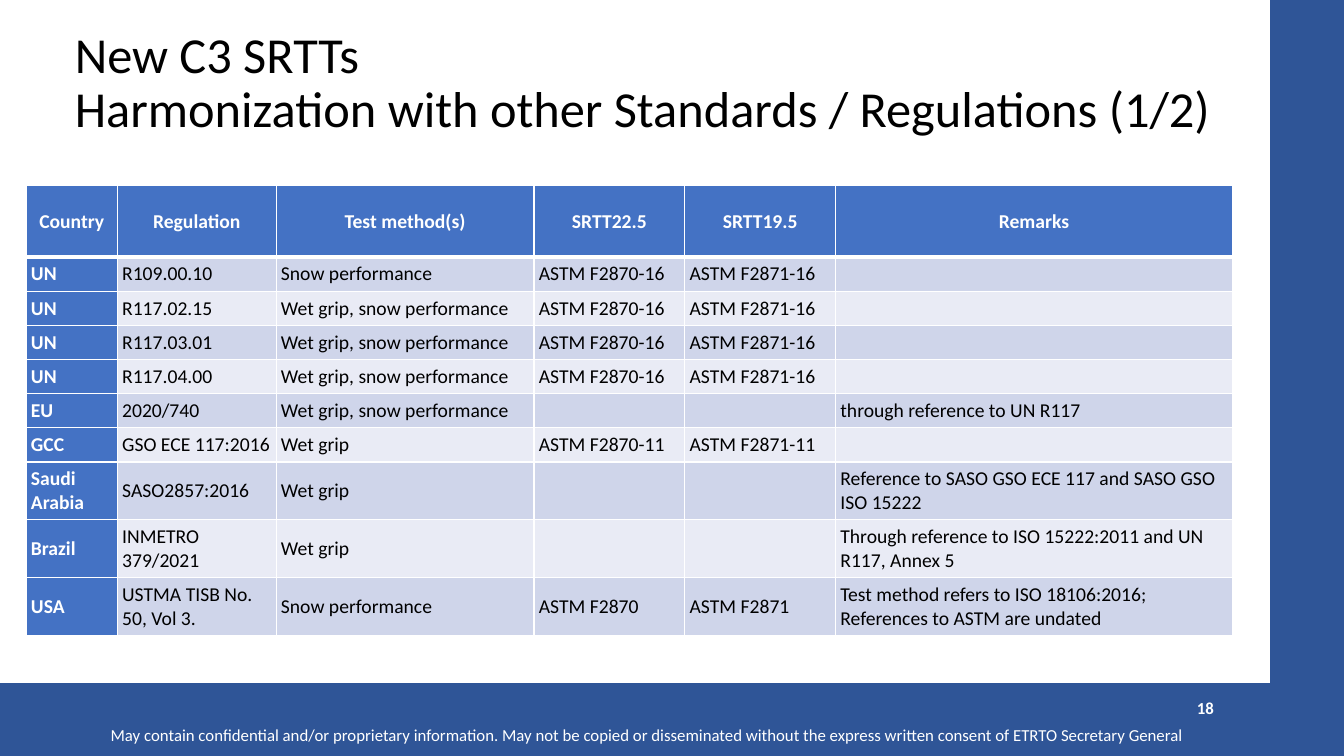
from dataclasses import dataclass

from lxml.etree import SubElement
from pptx import Presentation
from pptx.dml.color import RGBColor
from pptx.enum.shapes import MSO_SHAPE
from pptx.enum.text import MSO_ANCHOR, MSO_AUTO_SIZE, PP_ALIGN
from pptx.oxml import parse_xml
from pptx.oxml.ns import nsdecls, qn
from pptx.util import Cm, Pt


@dataclass(frozen=True)
class Theme:
    font: str = "Calibri"
    title: int = 36
    cell: int = 14
    small: int = 12
    bar: str = "2F5597"
    head: str = "4472C4"
    bands: tuple = ("CFD5EA", "E9EBF5")
    white: str = "FFFFFF"
    black: str = "000000"


class Page:
    def __init__(self, deck, theme):
        self.theme = theme
        self.slide = deck.slides.add_slide(deck.slide_layouts[5])

    def style(self, frame, size, color, bold=False, align=PP_ALIGN.LEFT):
        for para in frame.paragraphs:
            para.alignment = align
            for run in para.runs:
                font = run.font
                font.name, font.size, font.bold = self.theme.font, Pt(size), bold
                font.color.rgb = RGBColor.from_string(color)
            if not para.runs:
                # An empty cell takes its line height from the end mark.
                SubElement(para._p, qn("a:endParaRPr"), sz=str(size * 100))

    def title(self, text, box):
        shape = self.slide.shapes.title
        shape.left, shape.top, shape.width, shape.height = map(Cm, box)
        frame = shape.text_frame
        frame.text = text
        frame.word_wrap = True
        frame.auto_size = MSO_AUTO_SIZE.NONE
        frame.vertical_anchor = MSO_ANCHOR.MIDDLE
        frame.paragraphs[0].line_spacing = 0.9
        self.style(frame, self.theme.title, self.theme.black)

    def bar(self, box):
        shape = self.slide.shapes.add_shape(MSO_SHAPE.RECTANGLE, *map(Cm, box))
        shape.shadow.inherit = False
        color = RGBColor.from_string(self.theme.bar)
        shape.fill.solid()
        shape.fill.fore_color.rgb = color
        shape.line.color.rgb = color
        shape.line.width = Pt(1)

    def note(self, text, box, bold=False, align=PP_ALIGN.LEFT):
        frame = self.slide.shapes.add_textbox(*map(Cm, box)).text_frame
        frame.text = text
        frame.word_wrap = True
        frame.vertical_anchor = MSO_ANCHOR.MIDDLE
        self.style(frame, self.theme.small, self.theme.white, bold, align)

    def edge(self, cell, widths):
        """Draw the left, right, top and bottom borders, widths in points."""
        props = cell._tc.get_or_add_tcPr()
        for spot, (side, width) in enumerate(zip("LRTB", widths)):
            props.insert(spot, parse_xml(
                f'<a:ln{side} {nsdecls("a")} w="{Pt(width)}"><a:solidFill>'
                f'<a:srgbClr val="{self.theme.white}"/></a:solidFill></a:ln{side}>'))

    def cell(self, cell, text, row, col):
        theme = self.theme
        top, key = row == 0, row == 0 or col == 0
        cell.text = text
        cell.vertical_anchor = MSO_ANCHOR.MIDDLE
        cell.margin_left = cell.margin_right = Cm(0.12)
        cell.margin_top = cell.margin_bottom = Cm(0.12)
        cell.fill.solid()
        fill = theme.head if key else theme.bands[(row - 1) % 2]
        cell.fill.fore_color.rgb = RGBColor.from_string(fill)
        self.edge(cell, (1, 1, 3 if row == 1 else 1, 3 if top else 1))
        self.style(cell.text_frame, theme.cell, theme.white if key else theme.black,
                   key, PP_ALIGN.CENTER if top else PP_ALIGN.LEFT)

    def table(self, rows, spot, widths, heights):
        table = self.slide.shapes.add_table(
            len(rows), len(widths), *map(Cm, (*spot, sum(widths), sum(heights)))).table
        table.first_col = True
        for col, width in zip(table.columns, widths):
            col.width = Cm(width)
        for line, height in zip(table.rows, heights):
            line.height = Cm(height)
        for r, row in enumerate(rows):
            for c, text in enumerate(row):
                self.cell(table.cell(r, c), text, r, c)


WET, SNOW = "Wet grip", "Snow performance"
BOTH = "Wet grip, snow performance"
A16 = ("ASTM F2870-16", "ASTM F2871-16")
ROWS = [
    ("Country", "Regulation", "Test method(s)", "SRTT22.5", "SRTT19.5", "Remarks"),
    ("UN", "R109.00.10", SNOW, *A16, ""),
    ("UN", "R117.02.15", BOTH, *A16, ""),
    ("UN", "R117.03.01", BOTH, *A16, ""),
    ("UN", "R117.04.00", BOTH, *A16, ""),
    ("EU", "2020/740", BOTH, "", "", "through reference to UN R117"),
    ("GCC", "GSO ECE 117:2016", WET, "ASTM F2870-11", "ASTM F2871-11", ""),
    ("Saudi Arabia", "SASO2857:2016", WET, "", "",
     "Reference to SASO GSO ECE 117 and SASO GSO ISO 15222"),
    ("Brazil", "INMETRO 379/2021", WET, "", "",
     "Through reference to ISO 15222:2011 and UN R117, Annex 5"),
    ("USA", "USTMA TISB No. 50, Vol 3.", SNOW, "ASTM F2870", "ASTM F2871",
     "Test method refers to ISO 18106:2016; References to ASTM are undated"),
]
WIDTHS = (2.3, 4, 6.5, 3.8, 3.8, 10)
HEIGHTS = [1.8] + [0.86] * 6 + [1.46] * 3


def main():
    deck = Presentation()
    deck.slide_width, deck.slide_height = Cm(33.87), Cm(19.05)
    page = Page(deck, Theme())
    page.bar((0, 17.22, 33.83, 1.83))
    page.bar((32.03, 0, 1.83, 19.05))
    page.note("May contain confidential and/or proprietary information. May not be "
              "copied or disseminated without the express written consent of "
              "ETRTO Secretary General", (2.54, 18.31, 28.78, 0.43))
    page.table(ROWS, (0.66, 4.68), WIDTHS, HEIGHTS)
    page.title("New C3 SRTTs\vHarmonization with other Standards / Regulations (1/2)",
               (1.63, 0.99, 29.25, 2.26))
    page.note("18", (23.22, 17.32, 7.62, 1.02), True, PP_ALIGN.RIGHT)
    deck.save("out.pptx")


if __name__ == "__main__":
    main()
